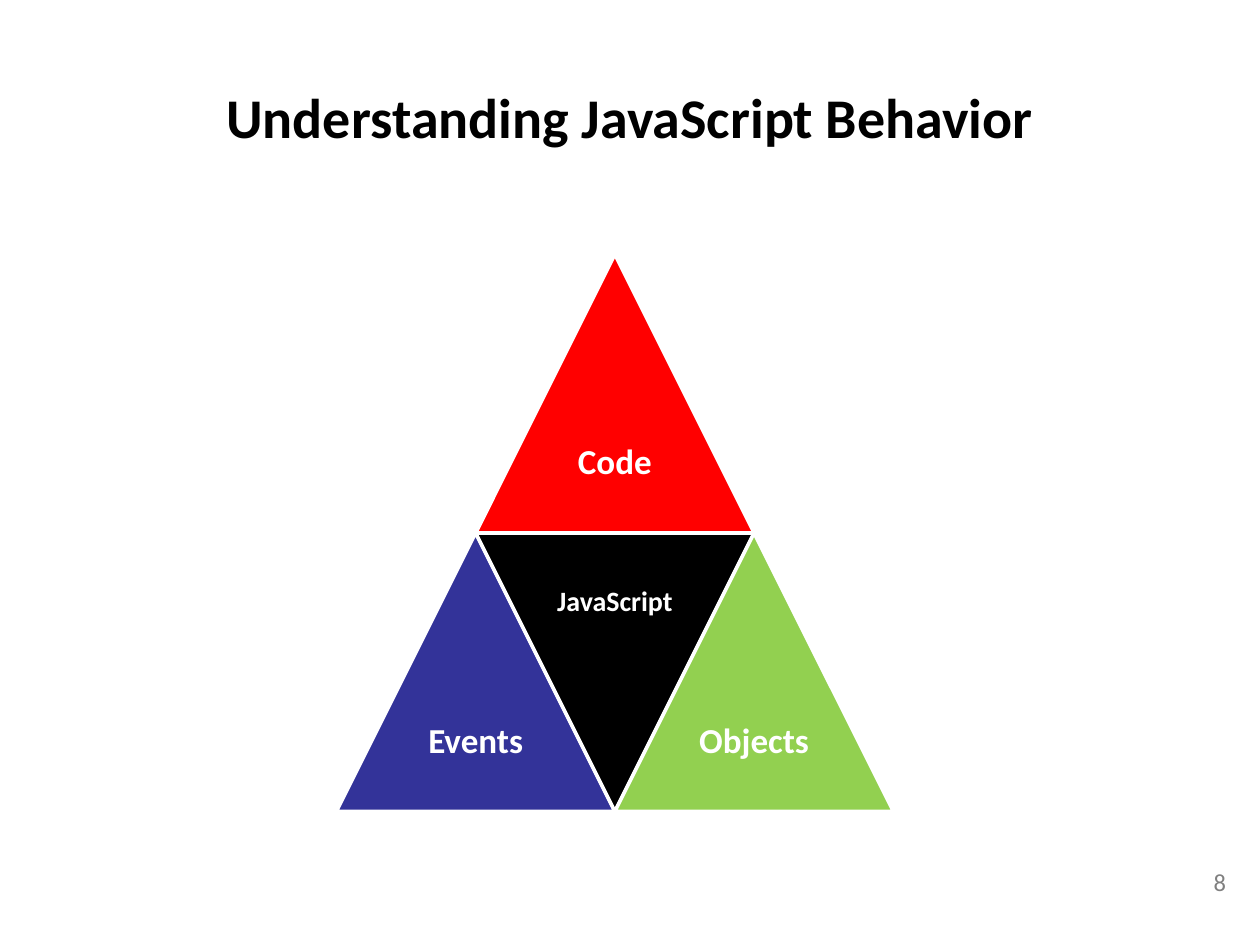
from pptx import Presentation
from pptx.dml.color import RGBColor
from pptx.enum.shapes import MSO_SHAPE
from pptx.enum.text import MSO_ANCHOR, PP_ALIGN
from pptx.util import Inches, Pt


def color(hex_string):
    return RGBColor.from_string(hex_string)


def write(shape, text, size, hex_string, alignment, bold=False):
    shape.text_frame.text = text
    shape.text_frame.word_wrap = True
    paragraph = shape.text_frame.paragraphs[0]
    paragraph.alignment = alignment
    font = paragraph.runs[0].font
    font.name = "Calibri"
    font.size = Pt(size)
    font.bold = bold
    font.color.rgb = color(hex_string)
    return paragraph


presentation = Presentation()
presentation.slide_width = Inches(10)
presentation.slide_height = Inches(7.5)
slide = presentation.slides.add_slide(presentation.slide_layouts[5])

# Title
title = slide.shapes.title
title.left, title.top = Inches(0.5), Inches(0.3)
title.width, title.height = Inches(9), Inches(1.25)
title.text_frame.vertical_anchor = MSO_ANCHOR.MIDDLE
write(title, "Understanding JavaScript Behavior", 32, "000000", PP_ALIGN.CENTER, True)

# Pyramid grid: columns are half a triangle wide, rows a whole triangle high
side = Inches(2.21)
half = side // 2
pyramid_left, pyramid_top = Inches(2.67), Inches(2.02)

# Label, column, row, fill, rotation, text size, inset
triangles = [
    ("Code", 1, 0, "FF0000", 0, 20, 0.08),
    ("Events", 0, 1, "333399", 0, 20, 0.08),
    ("JavaScript", 1, 1, "000000", 180, 16, 0.07),
    ("Objects", 2, 1, "92D050", 0, 20, 0.08),
]
for text, column, row, fill, rotation, size, inset in triangles:
    left = pyramid_left + column * half
    top = pyramid_top + row * side
    triangle = slide.shapes.add_shape(
        MSO_SHAPE.ISOSCELES_TRIANGLE, left, top, side, side)
    triangle.rotation = rotation
    triangle.shadow.inherit = False
    triangle.fill.solid()
    triangle.fill.fore_color.rgb = color(fill)
    triangle.line.color.rgb = color("FFFFFF")
    triangle.line.width = Pt(2)

    # The label fills the wide half of its triangle
    label_top = top if rotation else top + half
    label = slide.shapes.add_textbox(left + half // 2, label_top, half, half)
    frame = label.text_frame
    frame.vertical_anchor = MSO_ANCHOR.MIDDLE
    frame.margin_left = frame.margin_right = Inches(inset)
    frame.margin_top = frame.margin_bottom = Inches(inset)
    paragraph = write(label, text, size, "FFFFFF", PP_ALIGN.CENTER, True)
    paragraph.line_spacing = 0.9

# Slide number
number = slide.shapes.add_textbox(
    Inches(7.5), Inches(6.83), Inches(2.33), Inches(0.52))
write(number, "8", 14, "808080", PP_ALIGN.RIGHT)

presentation.save("out.pptx")
